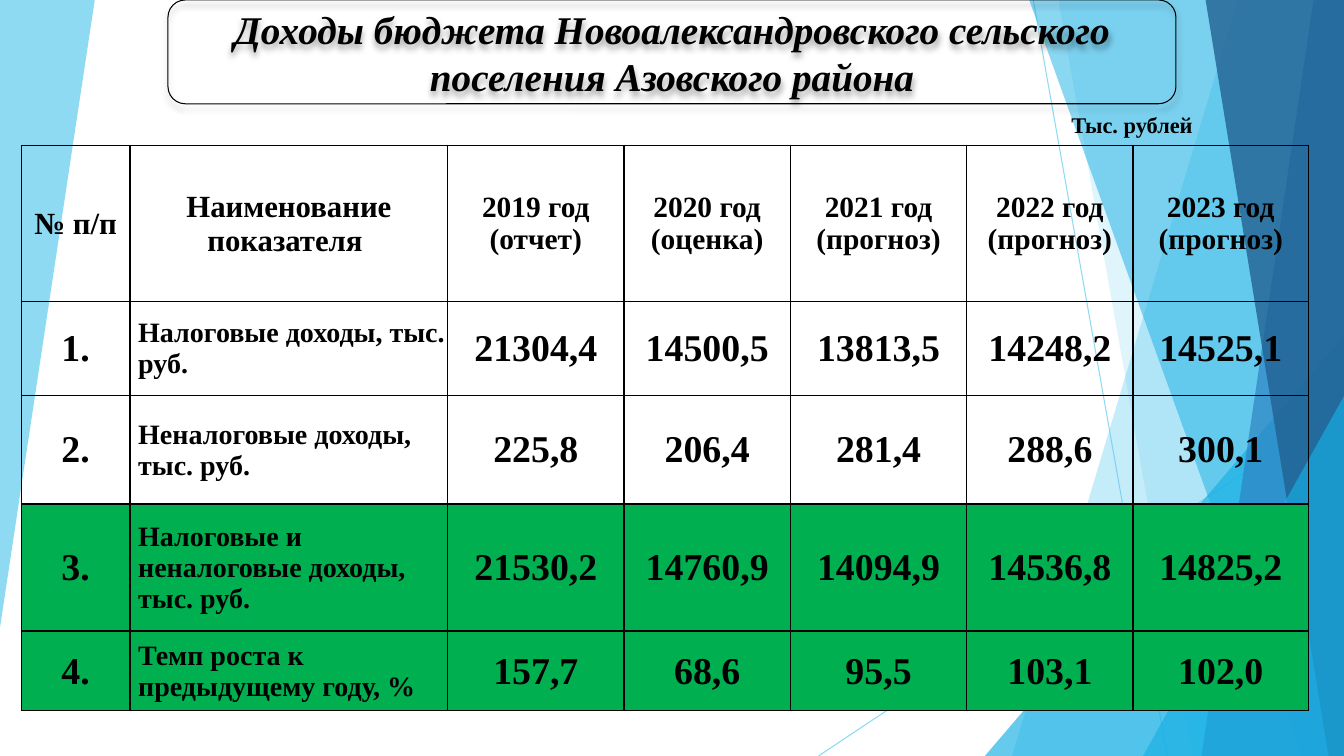
from lxml.etree import SubElement
from pptx import Presentation
from pptx.dml.color import RGBColor
from pptx.enum.shapes import MSO_CONNECTOR, MSO_SHAPE
from pptx.enum.text import MSO_ANCHOR, PP_ALIGN
from pptx.oxml import parse_xml
from pptx.oxml.ns import nsdecls, qn
from pptx.util import Inches, Pt

FONT = "Times New Roman"
COLORS = {
    "ink": "000000", "sky": "5FCBEF", "cyan": "17B0E4",
    "blue": "2E83C3", "navy": "226292", "green": "00B050",
}
COLS = [108, 315, 175, 165, 175, 165, 174]
ROWS = [155, 93, 108, 126, 79]
DATA = [
    ["№ п/п", "Наименование показателя ", "2019 год\n(отчет)", "2020 год (оценка)",
     "2021 год (прогноз)", "2022 год (прогноз)", "2023 год (прогноз)"],
    ["1.", "Налоговые доходы, тыс. руб.",
     "21304,4", "14500,5", "13813,5", "14248,2", "14525,1"],
    ["2.", "Неналоговые доходы,\nтыс. руб.",
     "225,8", "206,4", "281,4", "288,6", "300,1"],
    ["3.", "Налоговые и неналоговые доходы, тыс. руб.",
     "21530,2", "14760,9", "14094,9", "14536,8", "14825,2"],
    ["4.", "Темп роста к предыдущему году, %",
     "157,7", "68,6", "95,5", "103,1", "102,0"],
]
FACETS = [
    (92.1, 75.3, "sky", 36), (78.75, 88.73, "sky", 20),
    (73.28, 44.4, "cyan", 66), (76.58, 96.83, "cyan", 50),
    (97.73, 89.4, "blue", 70), (89.7, 98.85, "navy", 80),
    (85.05, 52.4, "cyan", 66),
]
TRIANGLES = (2, 6)


def rgb(name):
    return RGBColor.from_string(COLORS[name])


def point(box, x, y):
    left, top, width, height = box
    return int(left + width * x / 100), int(top + height * y / 100)


def part(box, x, y, w, h):
    return point(box, x, y) + point((0, 0) + box[2:], w, h)


def set_alpha(fill_parent, percent):
    color = next(fill_parent.iter(qn("a:srgbClr")))
    SubElement(color, qn("a:alpha")).set("val", str(percent * 1000))


def paint(sp, color, alpha):
    sp.shadow.inherit = False
    sp.fill.solid()
    sp.fill.fore_color.rgb = rgb(color)
    set_alpha(sp._element.spPr, alpha)
    sp.line.fill.background()


def write(tf, text, size, align=PP_ALIGN.LEFT, italic=False):
    for i, line in enumerate(text.split("\n")):
        p = tf.add_paragraph() if i else tf.paragraphs[0]
        p.alignment = align
        r = p.add_run()
        r.text = line
        r.font.name = FONT
        r.font.size = Pt(size)
        r.font.bold = True
        r.font.italic = italic
        r.font.color.rgb = rgb("ink")


def add_polygon(s, box, points, color, alpha):
    start, *rest = [point(box, x, y) for x, y in points]
    builder = s.shapes.build_freeform(*start)
    builder.add_line_segments(rest)
    paint(builder.convert_to_shape(), color, alpha)


def add_ray(s, box, start, end):
    line = s.shapes.add_connector(
        MSO_CONNECTOR.STRAIGHT, *point(box, *start), *point(box, *end))
    line.line.width = Pt(0.75)
    line.line.color.rgb = rgb("sky")
    set_alpha(line._element.spPr, 70)
    SubElement(line._element.spPr, qn("a:effectLst"))


def add_backdrop(s, box):
    add_polygon(s, box, [(0, 0), (7.05, 0), (0, 83)], "sky", 70)
    add_ray(s, box, (76.88, 0), (86.85, 100))
    add_ray(s, box, (100, 53.73), (60.9, 100))
    for i, (a, b, color, alpha) in enumerate(FACETS):
        if i in TRIANGLES:
            sp = s.shapes.add_shape(MSO_SHAPE.ISOSCELES_TRIANGLE,
                                    *part(box, a, b, 100 - a, 100 - b))
            sp.adjustments[0] = 1
            paint(sp, color, alpha)
        else:
            add_polygon(s, box, [(a, 0), (100, 0), (100, 100), (b, 100)], color, alpha)


def add_borders(cell):
    tc_pr = cell._tc.get_or_add_tcPr()
    for side in "LRTB":
        tc_pr.append(parse_xml(
            f'<a:ln{side} {nsdecls("a")} w="12700"><a:solidFill>'
            f'<a:srgbClr val="{COLORS["ink"]}"/></a:solidFill></a:ln{side}>'))


def add_budget_table(s, box):
    table = s.shapes.add_table(len(ROWS), len(COLS), *box).table
    table.first_row = table.horz_banding = False
    for col, share in zip(table.columns, COLS):
        col.width = int(box[2] * share / sum(COLS))
    for row, share in zip(table.rows, ROWS):
        row.height = int(box[3] * share / sum(ROWS))
    for i, values in enumerate(DATA):
        for j, text in enumerate(values):
            cell = table.cell(i, j)
            label = i > 0 and j == 1
            cell.vertical_anchor = MSO_ANCHOR.MIDDLE
            cell.margin_left = Inches(0.08 if label else 0.01)
            cell.margin_top = cell.margin_right = Inches(0.01)
            cell.margin_bottom = 0
            add_borders(cell)
            if i >= 3:
                cell.fill.solid()
                cell.fill.fore_color.rgb = rgb("green")
            else:
                cell.fill.background()
            size = (22 if j < 2 else 21) if i == 0 else 20 if label else 27
            write(cell.text_frame, text, size,
                  align=PP_ALIGN.LEFT if label else PP_ALIGN.CENTER)


def add_title(s, box):
    sp = s.shapes.add_shape(MSO_SHAPE.ROUNDED_RECTANGLE, *box)
    sp.fill.background()
    sp.line.color.rgb = rgb("ink")
    sp.line.width = Pt(0.75)
    sp.shadow.inherit = False
    sp._element.spPr.find(qn("a:effectLst")).append(parse_xml(
        f'<a:outerShdw {nsdecls("a")} blurRad="{Pt(4)}" dist="{Pt(3)}" dir="5400000" '
        f'rotWithShape="0"><a:srgbClr val="{COLORS["ink"]}">'
        '<a:alpha val="35000"/></a:srgbClr></a:outerShdw>'))
    tf = sp.text_frame
    tf.word_wrap = True
    tf.vertical_anchor = MSO_ANCHOR.MIDDLE
    tf.margin_left = tf.margin_right = tf.margin_top = tf.margin_bottom = 0
    write(tf, "Доходы бюджета Новоалександровского сельского поселения Азовского района",
          28, align=PP_ALIGN.CENTER, italic=True)


def add_unit(s, box):
    tf = s.shapes.add_textbox(*box).text_frame
    tf.word_wrap = True
    write(tf, "Тыс. рублей", 16)


def main():
    prs = Presentation()
    prs.slide_width, prs.slide_height = Inches(13.33), Inches(7.5)
    s = prs.slides.add_slide(prs.slide_layouts[6])
    page = (0, 0, prs.slide_width, prs.slide_height)
    add_backdrop(s, page)
    add_budget_table(s, part(page, 1.58, 19.2, 95.78, 74.8))
    add_title(s, part(page, 12.5, 0, 75, 13.73))
    add_unit(s, part(page, 78.98, 14, 13.88, 4.93))
    prs.save("out.pptx")


if __name__ == "__main__":
    main()
